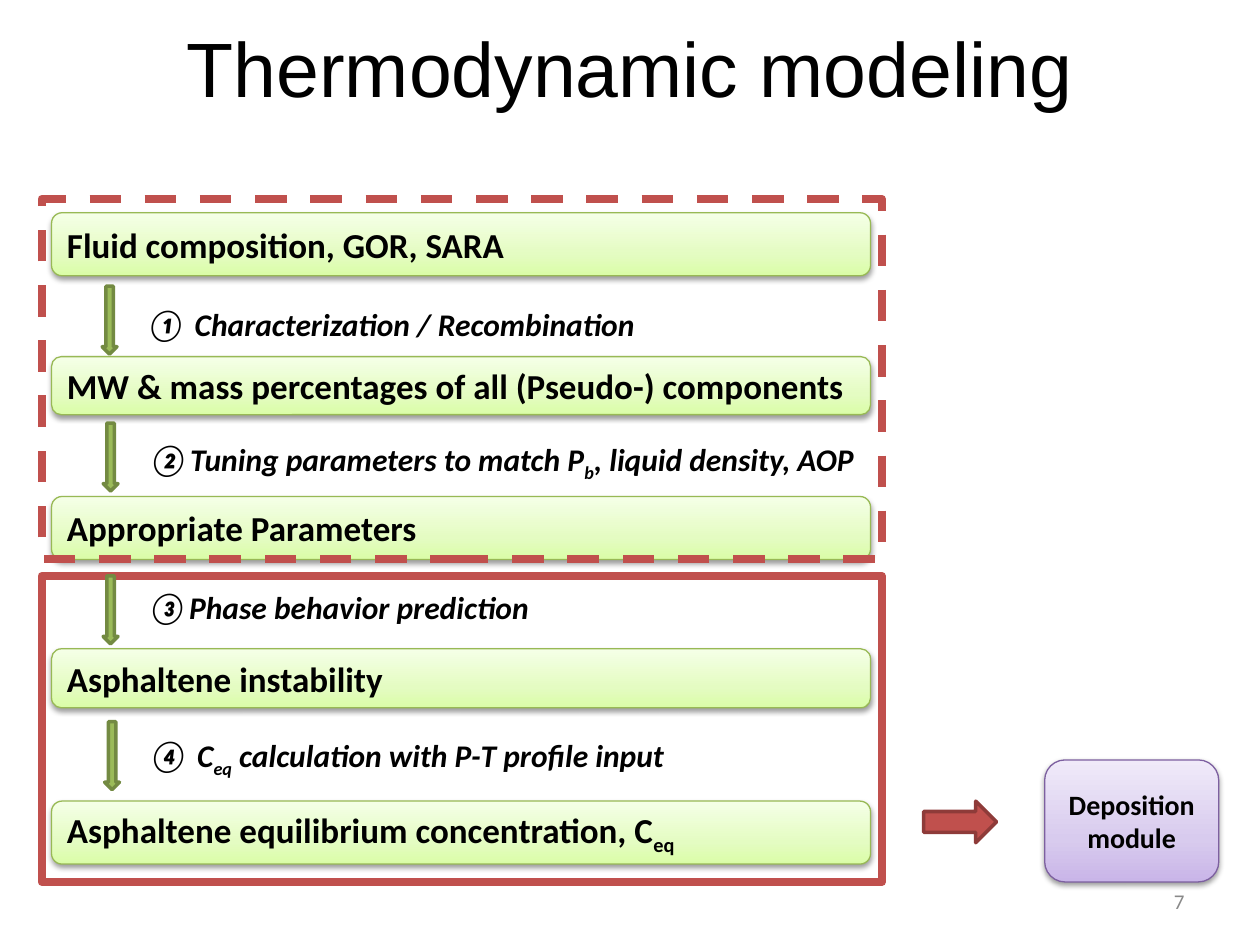
from copy import deepcopy

from lxml.etree import SubElement
from pptx import Presentation
from pptx.dml.color import RGBColor
from pptx.enum.dml import MSO_LINE
from pptx.enum.shapes import MSO_SHAPE
from pptx.enum.text import MSO_ANCHOR, PP_ALIGN
from pptx.oxml.ns import qn
from pptx.util import Cm, Pt

COLORS = {
    "text": "000000", "number": "898989", "white": "FFFFFF",
    "red": "C0504D", "dark_red": "8E3B39",
    "green": "9BBB59", "dark_green": "738A42",
    "green_edge": "98B955", "purple_edge": "7D60A0",
}
# Gradient colours from bottom to top
GREENS = ("DAFDA7", "E4FCC2", "F5FFE7")
PURPLES = ("C9B5E8", "D8CBEE", "F0EAF9")
STOPS = (0, 0.35, 1)


def rgb(name):
    return RGBColor.from_string(COLORS[name])


def write(tf, text, size, color="text", font="Calibri", bold=False, italic=False,
          align=PP_ALIGN.LEFT, anchor=MSO_ANCHOR.TOP, wrap=True):
    """Write one paragraph; parts between underscores become subscripts."""
    tf.word_wrap = wrap
    tf.vertical_anchor = anchor
    p = tf.paragraphs[0]
    p.alignment = align
    for i, part in enumerate(text.split("_")):
        if not part:
            continue
        r = p.add_run()
        r.text = part
        r.font.name, r.font.size = font, Pt(size)
        r.font.bold, r.font.italic = bold, italic
        r.font.color.rgb = rgb(color)
        if i % 2:
            r._r.get_or_add_rPr().set("baseline", "-25000")


class Diagram:
    def __init__(self, prs):
        self.s = prs.slides.add_slide(prs.slide_layouts[5])

    def title(self, text, x, y, w, h):
        sp = self.s.shapes.title
        sp.left, sp.top, sp.width, sp.height = Cm(x), Cm(y), Cm(w), Cm(h)
        write(sp.text_frame, text, 44, font="Arial", align=PP_ALIGN.CENTER,
              anchor=MSO_ANCHOR.MIDDLE)

    def shape(self, kind, x, y, w, h, line, width, fill=None):
        sp = self.s.shapes.add_shape(kind, Cm(x), Cm(y), Cm(w), Cm(h))
        sp.shadow.inherit = False
        sp.line.color.rgb, sp.line.width = rgb(line), Pt(width)
        if fill:
            sp.fill.solid()
            sp.fill.fore_color.rgb = rgb(fill)
        else:
            sp.fill.background()
        return sp

    def card(self, text, x, y, w, h, size, shades, edge, align=PP_ALIGN.LEFT):
        sp = self.shape(MSO_SHAPE.ROUNDED_RECTANGLE, x, y, w, h, edge, 0.75)
        sp.fill.gradient()
        sp.fill.gradient_angle = 90
        gs_list = sp._element.spPr.find(".//" + qn("a:gsLst"))
        gs_list.append(deepcopy(gs_list[0]))
        for stop, position, shade in zip(sp.fill.gradient_stops, STOPS, shades):
            stop.position = position
            stop.color.rgb = RGBColor.from_string(shade)
        # Soft shadow below the card
        effects = sp._element.spPr.find(qn("a:effectLst"))
        shadow = SubElement(effects, qn("a:outerShdw"), blurRad="40000",
                            dist="20000", dir="5400000", rotWithShape="0")
        black = SubElement(shadow, qn("a:srgbClr"), val=COLORS["text"])
        SubElement(black, qn("a:alpha"), val="38000")
        write(sp.text_frame, text, size, bold=True, align=align,
              anchor=MSO_ANCHOR.MIDDLE)

    def label(self, text, x, y, w, h, size, **fmt):
        sp = self.s.shapes.add_textbox(Cm(x), Cm(y), Cm(w), Cm(h))
        write(sp.text_frame, text, size, **fmt)


def main():
    prs = Presentation()
    prs.slide_width, prs.slide_height = Cm(25.4), Cm(19.05)
    d = Diagram(prs)
    d.title("Thermodynamic modeling", 1.27, -0.05, 22.86, 2.79)

    # Frame around the prediction steps
    d.shape(MSO_SHAPE.RECTANGLE, 0.84, 11.61, 16.94, 6.17, "red", 4.5, "white")

    # Results: text, top, height
    results = [
        ("Fluid composition, GOR, SARA", 4.29, 1.27),
        ("MW & mass percentages of all (Pseudo-) components", 7.19, 1.17),
        ("Appropriate Parameters", 10.01, 1.27),
        ("Asphaltene instability", 13.08, 1.19),
        ("Asphaltene equilibrium concentration, C_eq_", 16.15, 1.27),
    ]
    for text, y, h in results:
        d.card(text, 1.04, y, 16.51, h, 20, GREENS, "green_edge")

    # Steps: text, label left, top, width and wrap, arrow left and top
    steps = [
        ("① Characterization / Recombination", 2.69, 6.02, 17.86, True, 2.06, 5.77),
        ("②Tuning parameters to match P_b_, liquid density, AOP",
         2.74, 8.74, 17.35, True, 2.08, 8.53),
        ("③Phase behavior prediction", 2.72, 11.73, 8.31, False, 2.08, 11.61),
        ("④ C_eq_ calculation with P-T profile input",
         2.74, 14.71, 11.46, False, 2.11, 14.55),
    ]
    for text, x, y, w, wrap, arrow_x, arrow_y in steps:
        d.shape(MSO_SHAPE.DOWN_ARROW, arrow_x, arrow_y, 0.3, 1.37,
                "dark_green", 2, "green")
        d.label(text, x, y, w, 1.02, 18, bold=True, italic=True, wrap=wrap)

    # Dashed frame around the tuning steps
    frame = d.shape(MSO_SHAPE.RECTANGLE, 0.84, 4.01, 16.94, 7.26, "red", 4.5)
    frame.line.dash_style = MSO_LINE.DASH

    # Hand-over to the deposition module
    d.shape(MSO_SHAPE.RIGHT_ARROW, 18.62, 16.15, 1.47, 0.84, "dark_red", 2, "red")
    d.card("Deposition module", 21.06, 15.32, 3.51, 2.46, 16, PURPLES,
           "purple_edge", PP_ALIGN.CENTER)

    # Slide number
    d.label("7", 18.21, 17.65, 5.92, 1.02, 12, color="number",
            align=PP_ALIGN.RIGHT, anchor=MSO_ANCHOR.MIDDLE)
    prs.save("out.pptx")


if __name__ == "__main__":
    main()
